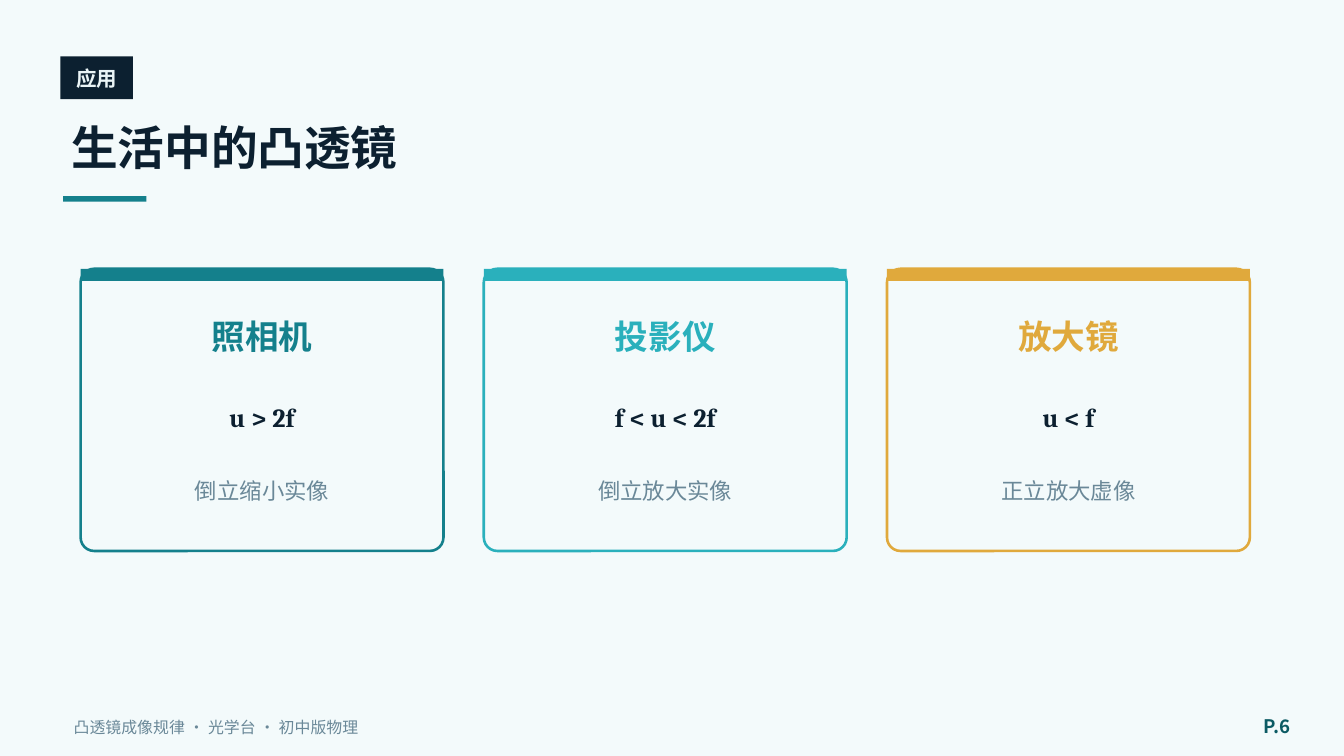
import pptx
import pptx.util
import pptx.oxml
import pptx.oxml.ns
import pptx.dml.color
import pptx.enum.text
import pptx.enum.shapes

Pt = pptx.util.Pt
ALIGN = pptx.enum.text.PP_ALIGN
KIND = pptx.enum.shapes.MSO_SHAPE

SANS = "Noto Sans CJK SC"
SERIF = "Cambria"
HUES = {
    "paper": "F3FAFB", "ink": "0C2030", "pale": "EAF4F6", "teal": "14808C",
    "aqua": "2AB0BC", "gold": "E0A93C", "gray": "6A8898", "deep": "0C5B64",
}
TAG = "应用"
TITLE = "生活中的凸透镜"
CARDS = [
    ("照相机", "u > 2f", "倒立缩小实像", "teal"),
    ("投影仪", "f < u < 2f", "倒立放大实像", "aqua"),
    ("放大镜", "u < f", "正立放大虚像", "gold"),
]
FOOTER = "凸透镜成像规律 · 光学台 · 初中版物理"
PAGE = "P.6"

LEFT, TOP, WIDTH, HEIGHT, STEP = 43.2, 144, 194.4, 151.2, 216
INSET = 11.5


def color(name):
    return pptx.dml.color.RGBColor.from_string(HUES[name])


def write(shape, text, size, hue, bold=True, align=ALIGN.CENTER, face=SANS):
    frame = shape.text_frame
    frame.word_wrap = True
    frame.auto_size = pptx.enum.text.MSO_AUTO_SIZE.NONE
    frame.vertical_anchor = pptx.enum.text.MSO_ANCHOR.MIDDLE
    para = frame.paragraphs[0]
    para.alignment = align
    run = para.add_run()
    run.text = text
    font = run.font
    font.size = Pt(size)
    font.bold = bold
    font.color.rgb = color(hue)
    font.name = face
    east = pptx.oxml.parse_xml(f'<a:ea {pptx.oxml.ns.nsdecls("a")} typeface="{face}"/>')
    run._r.get_or_add_rPr().append(east)


def label(slide, box, *args, **opts):
    write(slide.shapes.add_textbox(*map(Pt, box)), *args, **opts)


def block(slide, kind, box, fill, line=None):
    shape = slide.shapes.add_shape(kind, *map(Pt, box))
    shape.shadow.inherit = False
    shape.fill.solid()
    shape.fill.fore_color.rgb = color(fill)
    if line:
        shape.line.color.rgb = color(line)
        shape.line.width = Pt(1.4)
    else:
        shape.line.fill.background()
    return shape


def card(slide, left, name, rule, image, hue):
    frame = block(slide, KIND.ROUNDED_RECTANGLE, (left, TOP, WIDTH, HEIGHT), "paper", hue)
    frame.adjustments[0] = 0.048
    block(slide, KIND.RECTANGLE, (left, TOP, WIDTH, 6.5), hue)
    label(slide, (left, TOP + 18, WIDTH, 36), name, 18, hue)
    label(slide, (left, TOP + 64.8, WIDTH, 28.8), rule, 14, "ink", face=SERIF)
    label(slide, (left + INSET, TOP + 100.8, WIDTH - 2 * INSET, 36), image, 12, "gray", bold=False)


def main():
    deck = pptx.Presentation()
    deck.slide_width, deck.slide_height = Pt(720), Pt(405)
    slide = deck.slides.add_slide(deck.slide_layouts[5])
    slide.background.fill.solid()
    slide.background.fill.fore_color.rgb = color("paper")

    block(slide, KIND.RECTANGLE, (32.4, 30.2, 38.9, 23), "ink")
    label(slide, (32.4, 29.5, 38.9, 24.5), TAG, 11, "pale")
    title = slide.shapes.title
    title.left, title.top, title.width, title.height = map(Pt, (31, 56.2, 648, 44.6))
    write(title, TITLE, 25, "ink", align=ALIGN.LEFT)
    block(slide, KIND.RECTANGLE, (33.8, 105.1, 44.6, 3), "teal")

    for i, item in enumerate(CARDS):
        card(slide, LEFT + i * STEP, *item)

    label(slide, (32.4, 378.7, 468, 21.6), FOOTER, 8.5, "gray", bold=False, align=ALIGN.LEFT)
    label(slide, (655.2, 377.3, 43.2, 23), PAGE, 10, "deep", align=ALIGN.RIGHT)
    deck.save("out.pptx")


if __name__ == "__main__":
    main()
